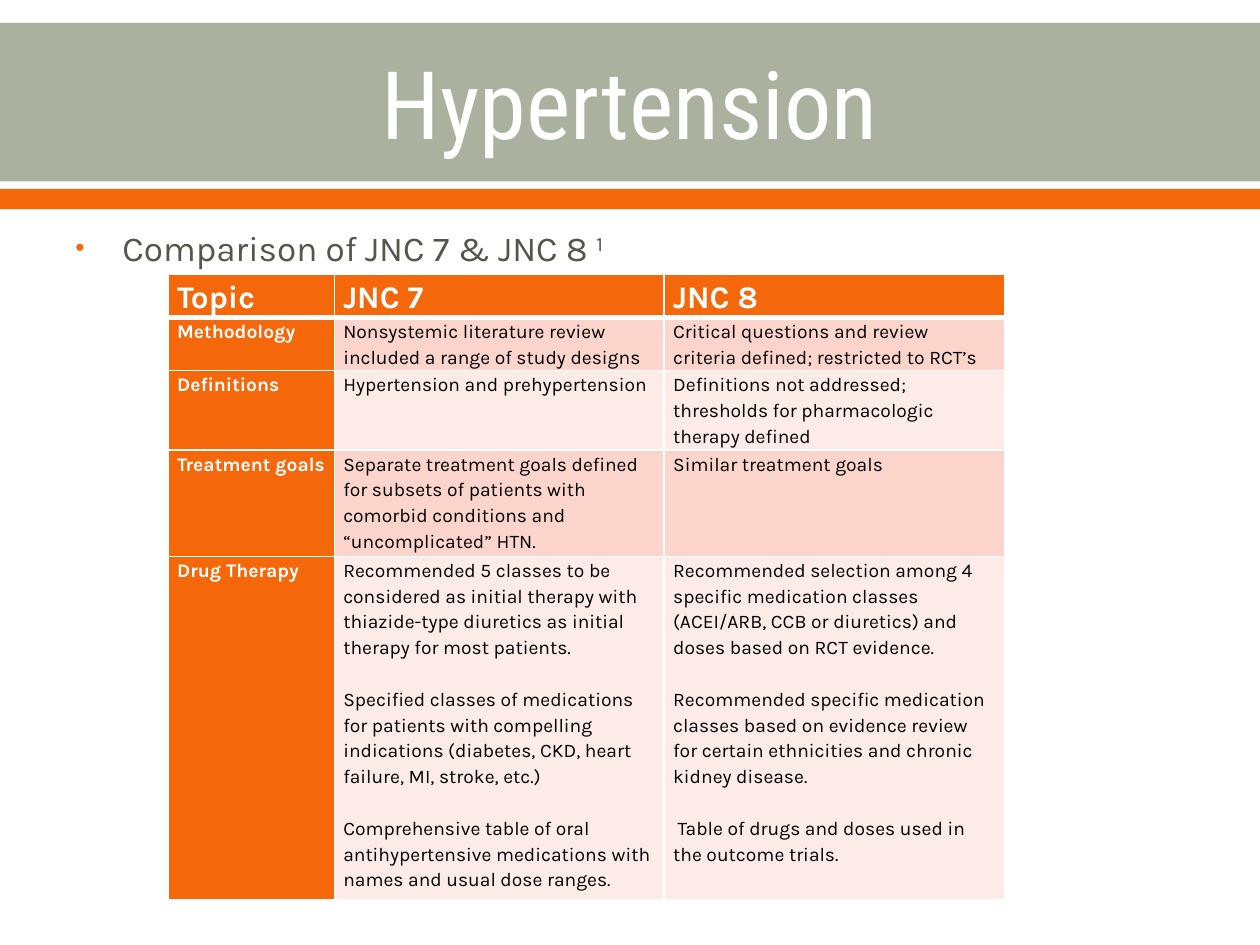
from dataclasses import dataclass

from lxml.etree import SubElement
from pptx import Presentation
from pptx.dml.color import RGBColor
from pptx.enum.shapes import MSO_SHAPE
from pptx.enum.text import MSO_ANCHOR, PP_ALIGN
from pptx.oxml.ns import qn
from pptx.util import Cm, Pt

RECT = MSO_SHAPE.RECTANGLE
MIDDLE, TOP = MSO_ANCHOR.MIDDLE, MSO_ANCHOR.TOP
CENTER, LEFT = PP_ALIGN.CENTER, PP_ALIGN.LEFT
HEAD, BODY = "Roboto Condensed", "Karla"
HUES = {
    "sage": "ABB19F", "orange": "F4680B", "white": "FFFFFF", "black": "000000",
    "gray": "55554A", "pink": "FBD4CC", "blush": "FDEBE7",
}


@dataclass
class Bar:
    top: float
    height: float
    hue: str


@dataclass
class Row:
    height: float
    topic: str
    old: list[str]
    new: list[str]


BARS = [Bar(0.46, 3.2, "sage"), Bar(3.81, 0.41, "orange")]
COLS = [3.35, 6.65, 6.87]
ROWS = [
    Row(0.84, "Topic", ["JNC 7"], ["JNC 8"]),
    Row(1.04, "Methodology",
        ["Nonsystemic literature review included a range of study designs"],
        ["Critical questions and review criteria defined; restricted to RCT’s"]),
    Row(1.56, "Definitions",
        ["Hypertension and prehypertension"],
        ["Definitions not addressed; thresholds for pharmacologic therapy defined"]),
    Row(2.08, "Treatment goals",
        ["Separate treatment goals defined for subsets of patients with comorbid "
         "conditions and “uncomplicated” HTN."],
        ["Similar treatment goals"]),
    Row(6.74, "Drug Therapy",
        ["Recommended 5 classes to be considered as initial therapy with "
         "thiazide-type diuretics as initial therapy for most patients.",
         "Specified classes of medications for patients with compelling "
         "indications (diabetes, CKD, heart failure, MI, stroke, etc.)",
         "Comprehensive table of oral antihypertensive medications with names "
         "and usual dose ranges."],
        ["Recommended selection among 4 specific medication classes (ACEI/ARB, "
         "CCB or diuretics) and doses based on RCT evidence.",
         "Recommended specific medication classes based on evidence review for "
         "certain ethnicities and chronic kidney disease.",
         " Table of drugs and doses used in the outcome trials."]),
]


def tint(hue: str) -> RGBColor:
    return RGBColor.from_string(HUES[hue])


def write(para, text: str, size: float, hue: str, font: str = BODY,
          bold: bool = False, align=LEFT, base: int = 0) -> None:
    para.alignment = align
    run = para.add_run()
    run.text = text
    run.font.size = Pt(size)
    run.font.name = font
    run.font.bold = bold
    run.font.color.rgb = tint(hue)
    if base:
        run.font._element.set("baseline", str(base * 1000))


def draw_bar(slide, bar: Bar, width: int) -> None:
    shape = slide.shapes.add_shape(RECT, 0, Cm(bar.top), width, Cm(bar.height))
    shape.shadow.inherit = False
    shape.fill.solid()
    shape.fill.fore_color.rgb = tint(bar.hue)
    shape.line.fill.background()


def add_frame(slide, top: float, height: float, anchor):
    frame = slide.shapes.add_textbox(Cm(1.27), Cm(top), Cm(22.86), Cm(height)).text_frame
    frame.word_wrap = True
    frame.vertical_anchor = anchor
    return frame


def add_dot(para) -> None:
    para.space_before = Pt(4)
    props = para._p.get_or_add_pPr()
    props.set("marL", str(Cm(0.95)))
    props.set("indent", str(-Cm(0.95)))
    SubElement(SubElement(props, qn("a:buClr")), qn("a:srgbClr"), val=HUES["orange"])
    SubElement(props, qn("a:buSzPct"), val="75000")
    SubElement(props, qn("a:buFont"), typeface="Arial")
    SubElement(props, qn("a:buChar"), char="•")


def add_edges(cell, top: float, foot: float) -> None:
    props = cell._tc.get_or_add_tcPr()
    for side, width in zip("LRTB", (1, 1, top, foot)):
        line = SubElement(props, qn(f"a:ln{side}"), w=str(Pt(width)))
        SubElement(SubElement(line, qn("a:solidFill")), qn("a:srgbClr"), val=HUES["white"])


def fill_cell(cell, texts: list[str], row: int, col: int) -> None:
    label = row == 0 or col == 0
    add_edges(cell, 3 if row == 1 else 1, 3 if row == 0 else 1)
    cell.fill.solid()
    cell.fill.fore_color.rgb = tint("orange" if label else "pink" if row % 2 else "blush")
    cell.margin_left = cell.margin_right = Cm(0.18)
    cell.margin_top = cell.margin_bottom = 0
    frame = cell.text_frame
    for place, text in enumerate(texts):
        para = frame.add_paragraph() if place else frame.paragraphs[0]
        para.line_spacing = 1.15
        if place:
            para.space_before = Pt(14.75)
        write(para, text, 11 if row else 18, "white" if label else "black", bold=label)


def draw_table(slide) -> None:
    table = slide.shapes.add_table(
        len(ROWS), len(COLS), Cm(3.39), Cm(5.52),
        Cm(sum(COLS)), Cm(sum(row.height for row in ROWS))).table
    for col, width in enumerate(COLS):
        table.columns[col].width = Cm(width)
    for place, row in enumerate(ROWS):
        table.rows[place].height = Cm(row.height)
        for col, texts in enumerate(([row.topic], row.old, row.new)):
            fill_cell(table.cell(place, col), texts, place, col)


def main() -> None:
    deck = Presentation()
    deck.slide_width, deck.slide_height = Cm(25.4), Cm(19.05)
    slide = deck.slides.add_slide(deck.slide_layouts[6])
    for bar in BARS:
        draw_bar(slide, bar, deck.slide_width)
    title = add_frame(slide, 0.51, 3.1, MIDDLE).paragraphs[0]
    write(title, "Hypertension", 54, "white", font=HEAD, align=CENTER)
    point = add_frame(slide, 4.45, 12.57, TOP).paragraphs[0]
    add_dot(point)
    write(point, "Comparison of JNC 7 & JNC 8 ", 20, "gray")
    write(point, "1", 20, "gray", base=30)
    draw_table(slide)
    deck.save("out.pptx")


if __name__ == "__main__":
    main()
